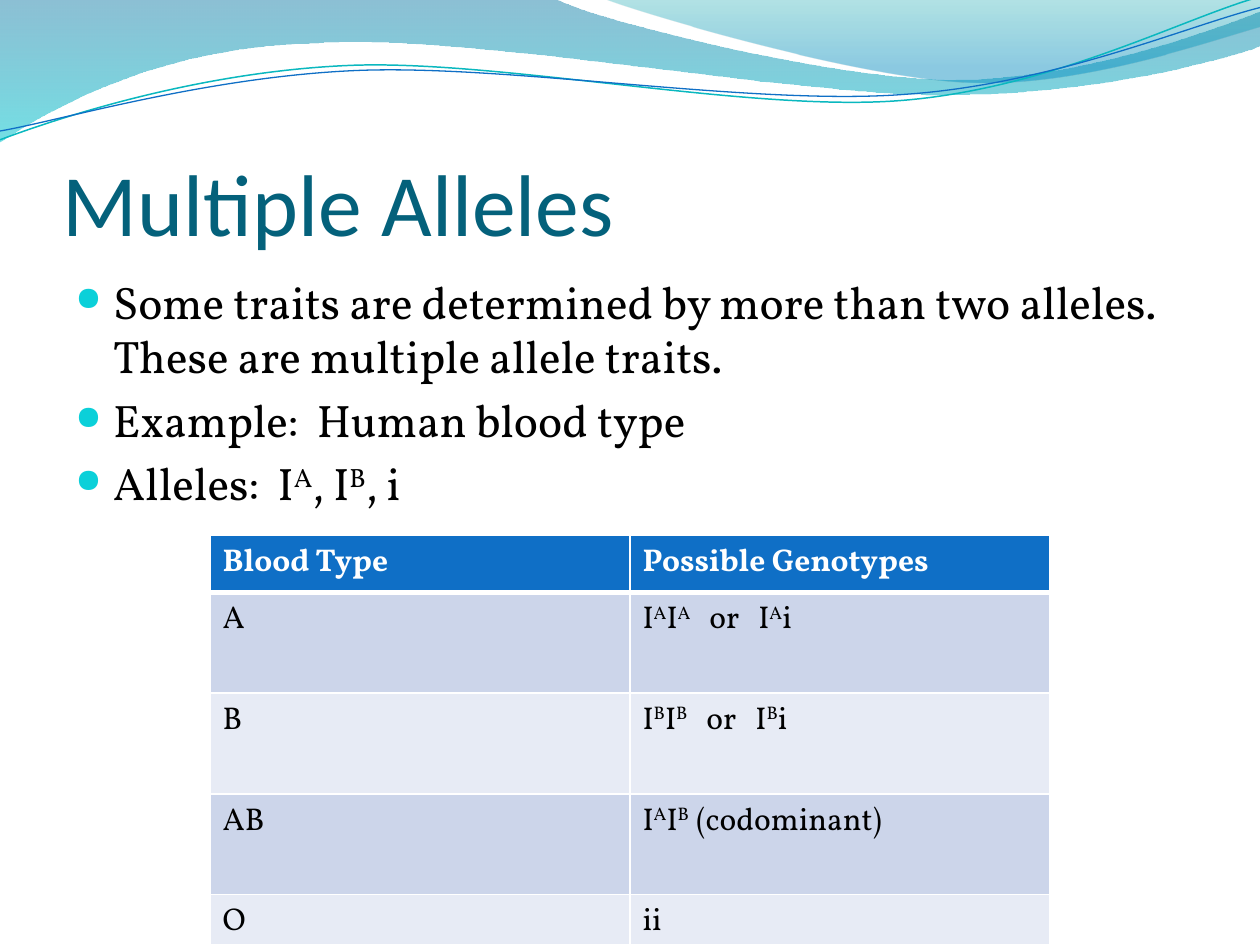
"""Builds the Multiple Alleles slide: waves, title, bullets and genotype table."""
from dataclasses import dataclass
from typing import NamedTuple

from lxml.etree import SubElement
from pptx import Presentation
from pptx.dml.color import RGBColor as Rgb
from pptx.enum.text import MSO_ANCHOR as Anchor
from pptx.oxml.ns import qn
from pptx.util import Inches, Pt

WIDTH, HEIGHT = Inches(10), Inches(7.5)


@dataclass(frozen=True)
class Theme:
    heading_font: str = "Calibri"
    body_font: str = "Vollkorn"
    title_size: float = 50
    body_size: float = 26
    table_size: float = 18
    title: str = "04617B"
    text: str = "000000"
    bullet: str = "0BD0D9"
    header: str = "0F6FC6"
    white: str = "FFFFFF"
    bands: tuple = ("CCD5EA", "E7EBF5")


THEME = Theme()


class Box(NamedTuple):
    left: float
    top: float
    width: float
    height: float

    def lengths(self) -> tuple:
        return (int(WIDTH * self.left), int(HEIGHT * self.top),
                int(WIDTH * self.width), int(HEIGHT * self.height))


class Stop(NamedTuple):
    position: float
    color: str
    opacity: int


class Wave(NamedTuple):
    start: tuple
    segments: list
    stops: tuple = ()
    line: str = ""
    weight: float = 0


WAVES = [
    Wave((0, 0), [(4.4, -0.01), (4.76, 0.17, 6.64, 0.63, 7.58, 0.63),
                  (8.53, 0.63, 9.58, 0.26, 10, 0.09), (10.01, 0.36),
                  (9.83, 0.44, 8.7, 0.76, 7.46, 0.75),
                  (6.22, 0.75, 3.82, 0.28, 2.57, 0.34),
                  (1.29, 0.36, 0.46, 0.83, -0.01, 1.13)],
         stops=(Stop(0, "0074A1", 45), Stop(1, "00C6CF", 55))),
    Wave((4.79, -0.01), [(5.09, 0.11, 6.82, 0.62, 7.69, 0.65),
                         (8.56, 0.69, 9.61, 0.32, 10, 0.21), (10, 0)],
         stops=(Stop(0, "00A1A9", 30), Stop(0.8, "008BBF", 45))),
    Wave((0, 1.11), [(0.48, 0.93, 1.58, 0.57, 2.77, 0.52),
                     (3.95, 0.47, 5.93, 0.89, 7.13, 0.8),
                     (8.33, 0.71, 9.38, 0.15, 9.98, -0.02)],
         line="0AB8BF", weight=0.85),
    Wave((0, 1.04), [(0.47, 0.96, 1.64, 0.61, 2.83, 0.56),
                     (4.03, 0.51, 5.97, 0.84, 7.17, 0.75),
                     (8.36, 0.67, 9.41, 0.21, 10, 0.06)],
         line="0F6FC6", weight=0.75),
]

TITLE_BOX = Box(0.05, 0.102, 0.9, 0.167)
BODY_BOX = Box(0.05, 0.283, 0.9, 0.64)
TABLE_BOX = Box(1 / 6, 17 / 30, 2 / 3, 13 / 30)
ROW_HEIGHTS = (0.45, 0.8, 0.8, 0.8, 0.4)

BULLETS = [
    "Some traits are determined by more than two alleles.  These are multiple allele traits.",
    "Example:  Human blood type",
    "Alleles:  I|A|, I|B|, i",
]
GENOTYPES = [
    ("Blood Type", "Possible Genotypes"),
    ("A", "I|A|I|A|   or   I|A|i"),
    ("B", "I|B|I|B|   or   I|B|i"),
    ("AB", "I|A|I|B  |(codominant)"),
    ("O", "ii"),
]


def bend_segments(shape, segments: list) -> None:
    """Turn the straight segments that have control points into cubic curves."""
    lines = list(shape._element.spPr.iter(qn("a:lnTo")))
    for line, segment in zip(lines, segments):
        if len(segment) == 2:
            continue
        line.tag = qn("a:cubicBezTo")
        line.remove(line[0])
        for x, y in zip(segment[::2], segment[1::2]):
            SubElement(line, qn("a:pt"), x=str(Inches(x) - shape.left),
                       y=str(Inches(y) - shape.top))


def draw_wave(slide, wave: Wave) -> None:
    """Draw one wave as a gradient area or a thin line."""
    start, *ends = [(Inches(point[-2]), Inches(point[-1]))
                    for point in (wave.start, *wave.segments)]
    builder = slide.shapes.build_freeform(*start)
    builder.add_line_segments(ends, close=bool(wave.stops))
    shape = builder.convert_to_shape()
    bend_segments(shape, wave.segments)
    shape.shadow.inherit = False
    if not wave.stops:
        shape.fill.background()
        shape.line.color.rgb = Rgb.from_string(wave.line)
        shape.line.width = Pt(wave.weight)
        return
    shape.line.fill.background()
    shape.fill.gradient()
    shape.fill.gradient_angle = 270
    for gradient_stop, stop in zip(shape.fill.gradient_stops, wave.stops):
        gradient_stop.position = stop.position
        gradient_stop.color.rgb = Rgb.from_string(stop.color)
    colors = shape._element.spPr.iter(qn("a:srgbClr"))
    for color, stop in zip(list(colors), wave.stops):
        SubElement(color, qn("a:alpha"), val=str(stop.opacity * 1000))


def write(paragraph, text: str, font: str, size: float, color: str, bold: bool = False) -> None:
    """Write text whose parts between bars are superscript."""
    for index, part in enumerate(text.split("|")):
        run = paragraph.add_run()
        run.text = part
        run.font.name, run.font.size, run.font.bold = font, Pt(size), bold
        run.font.color.rgb = Rgb.from_string(color)
        if index % 2:
            run.font._element.set("baseline", "30000")


def add_bullet(paragraph) -> None:
    """Give a paragraph a hanging round bullet."""
    paragraph.space_before = Pt(THEME.body_size * 0.2)
    properties = paragraph._p.get_or_add_pPr()
    properties.set("marL", str(Inches(0.3)))
    properties.set("indent", str(-Inches(0.3)))
    color = SubElement(properties, qn("a:buClr"))
    SubElement(color, qn("a:srgbClr"), val=THEME.bullet)
    SubElement(properties, qn("a:buSzPct"), val="73000")
    SubElement(properties, qn("a:buChar"), char="●")


def draw_title(slide, text: str) -> None:
    """Draw the title on the bottom of its box."""
    frame = slide.shapes.add_textbox(*TITLE_BOX.lengths()).text_frame
    frame.word_wrap = True
    frame.vertical_anchor = Anchor.BOTTOM
    frame.margin_left = frame.margin_right = frame.margin_bottom = 0
    write(frame.paragraphs[0], text, THEME.heading_font, THEME.title_size, THEME.title)


def draw_bullets(slide, lines: list) -> None:
    """Draw the bulleted body text."""
    frame = slide.shapes.add_textbox(*BODY_BOX.lengths()).text_frame
    frame.word_wrap = True
    for index, line in enumerate(lines):
        paragraph = frame.add_paragraph() if index else frame.paragraphs[0]
        add_bullet(paragraph)
        write(paragraph, line, THEME.body_font, THEME.body_size, THEME.text)


def style_cell(cell, fill: str, bottom: float, top: float) -> None:
    """Set the white borders and the fill of a cell."""
    properties = cell._tc.get_or_add_tcPr()
    for side, weight in (("L", 1), ("R", 1), ("T", top), ("B", bottom)):
        border = SubElement(properties, qn(f"a:ln{side}"), w=str(Pt(weight)))
        SubElement(SubElement(border, qn("a:solidFill")), qn("a:srgbClr"), val=THEME.white)
    cell.fill.solid()
    cell.fill.fore_color.rgb = Rgb.from_string(fill)


def draw_table(slide, rows: list) -> None:
    """Draw the table of blood types and genotypes."""
    table = slide.shapes.add_table(len(rows), len(rows[0]), *TABLE_BOX.lengths()).table
    for row_index, (texts, height) in enumerate(zip(rows, ROW_HEIGHTS)):
        table.rows[row_index].height = Inches(height)
        header = row_index == 0
        fill = THEME.header if header else THEME.bands[(row_index - 1) % 2]
        for column, text in enumerate(texts):
            cell = table.cell(row_index, column)
            style_cell(cell, fill, 3 if header else 1, 3 if row_index == 1 else 1)
            write(cell.text_frame.paragraphs[0], text, THEME.body_font, THEME.table_size,
                  THEME.white if header else THEME.text, header)


def main() -> None:
    """Build and save the slide."""
    presentation = Presentation()
    presentation.slide_width, presentation.slide_height = WIDTH, HEIGHT
    slide = presentation.slides.add_slide(presentation.slide_layouts[6])
    for wave in WAVES:
        draw_wave(slide, wave)
    draw_title(slide, "Multiple Alleles")
    draw_bullets(slide, BULLETS)
    draw_table(slide, GENOTYPES)
    presentation.save("out.pptx")


if __name__ == "__main__":
    main()
